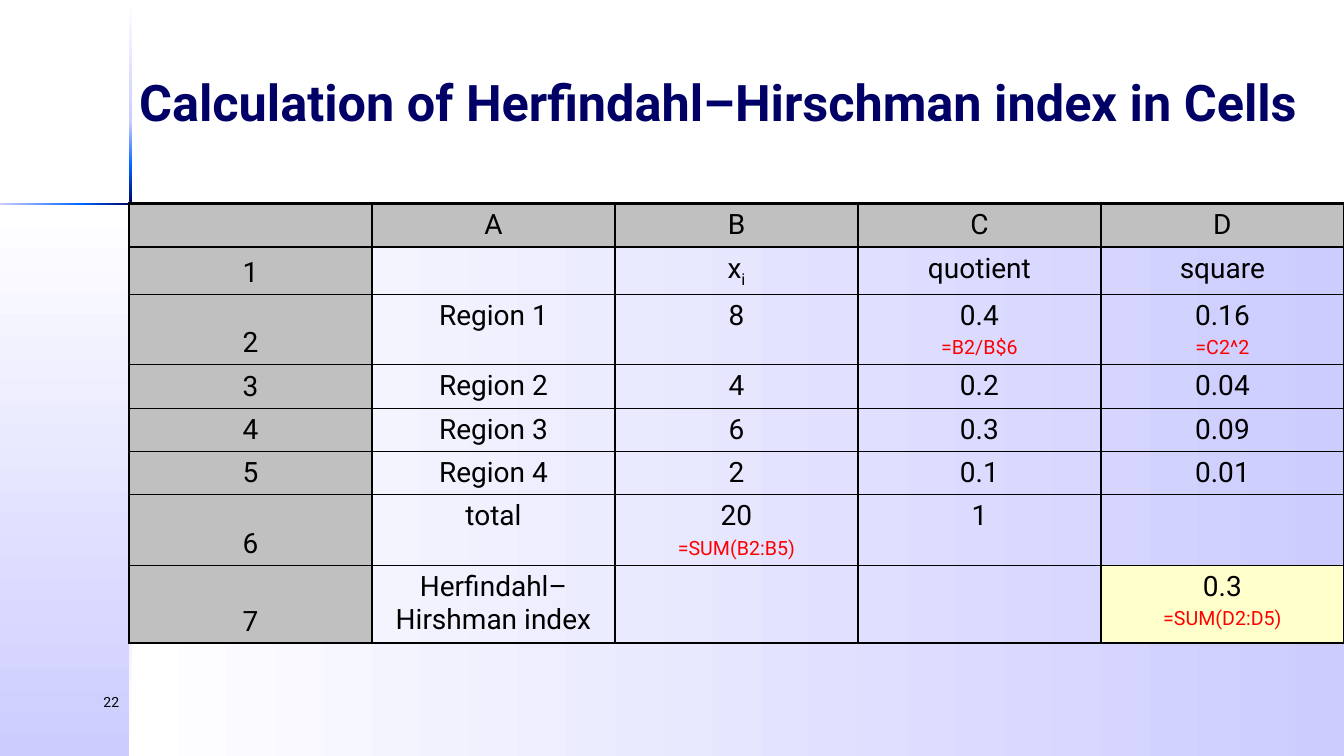
from itertools import pairwise

from pptx import Presentation
from pptx.dml.color import RGBColor
from pptx.enum.shapes import MSO_SHAPE as SHAPE
from pptx.enum.text import MSO_ANCHOR as ANCHOR, MSO_AUTO_SIZE as AUTO, PP_ALIGN as ALIGN
from pptx.oxml import parse_xml
from pptx.oxml.ns import nsdecls
from pptx.util import Inches, Pt

FONT = "Roboto"
WHITE = RGBColor(0xFF, 0xFF, 0xFF)
PALE = RGBColor(0xCC, 0xCC, 0xFF)
BLUE = RGBColor(0x00, 0x66, 0xFF)
NAVY = RGBColor(0x00, 0x00, 0x66)
BLACK = RGBColor(0x00, 0x00, 0x00)
GREY = RGBColor(0xC0, 0xC0, 0xC0)
RED = RGBColor(0xFF, 0x00, 0x00)
YELLOW = RGBColor(0xFF, 0xFF, 0xCC)

WIDTH, HEIGHT = 13.33, 7.5
LEFT, TOP = 1.28, 2.02
BAR = 0.03

TITLE = {"size": Pt(36), "bold": True, "name": FONT, "color": NAVY}
NUMBER = {"size": Pt(10), "name": FONT, "color": BLACK}
VALUE = {"size": Pt(20), "name": FONT, "color": BLACK}
FORMULA = {"size": Pt(14), "name": FONT, "color": RED}

ROW_HEIGHTS = [0.43, 0.47, 0.7, 0.43, 0.43, 0.43, 0.7, 0.77]
ROWS = [
    ["", "A", "B", "C", "D"],
    ["1", "", "x_i", "quotient", "square"],
    ["2", "Region 1", "8", "0.4\n=B2/B$6", "0.16\n=C2^2"],
    ["3", "Region 2", "4", "0.2", "0.04"],
    ["4", "Region 3", "6", "0.3", "0.09"],
    ["5", "Region 4", "2", "0.1", "0.01"],
    ["6", "total", "20\n=SUM(B2:B5)", "1", ""],
    ["7", "Herfindahl–Hirshman index", "", "", "0.3\n=SUM(D2:D5)"],
]


def add_run(p, text, style):
    """Append a run formatted from a dict of font values."""
    r = p.add_run()
    r.text = text
    for key, value in style.items():
        if key == "color":
            r.font.color.rgb = value
        else:
            setattr(r.font, key, value)
    return r


def add_band(s, box, colors, down):
    """Draw a borderless rectangle with evenly spaced gradient colours."""
    sp = s.shapes.add_shape(SHAPE.RECTANGLE, *map(Inches, box))
    sp.shadow.inherit = False
    sp.line.fill.background()
    step = 100000 // (len(colors) - 1)
    stops = "".join(
        f'<a:gs pos="{i * step}"><a:srgbClr val="{c}"/></a:gs>'
        for i, c in enumerate(colors))
    angle = 5400000 if down else 0
    sp.fill.background()
    old = sp.element.spPr.find("{*}noFill")
    old.getparent().replace(old, parse_xml(
        f'<a:gradFill {nsdecls("a")} rotWithShape="1"><a:gsLst>{stops}</a:gsLst>'
        f'<a:lin ang="{angle}" scaled="0"/></a:gradFill>'))


def add_backdrop(s, x, y, width, height):
    """Shade the two lower panels and draw the crossing bars at x, y."""
    add_band(s, (x, y, width - x, height - y), [WHITE, PALE], False)
    add_band(s, (0, y, x, height - y), [WHITE, PALE], True)
    glow = [[PALE, BLUE], [BLUE, NAVY, BLUE], [BLUE, PALE], [PALE, WHITE]]
    across = [0, 0.81, 1.78, 2.36, width]
    down = [0.01, 1.21, 1.65, 2.38, 2.82, height]
    for (a, b), colors in zip(pairwise(across), glow):
        add_band(s, (a, y - 0.01, b - a, 0.02), colors, False)
    for (a, b), colors in zip(pairwise(down), [[WHITE, PALE]] + glow):
        add_band(s, (x, a, BAR, b - a), colors, True)


def add_title(s, x, y, width, height):
    """Fill the title placeholder and bring it above the backdrop."""
    sp = s.shapes.title
    sp.left, sp.top, sp.width, sp.height = map(Inches, (x, y, width, height))
    tf = sp.text_frame
    for key, value in {"word_wrap": True, "auto_size": AUTO.NONE,
                       "vertical_anchor": ANCHOR.MIDDLE}.items():
        setattr(tf, key, value)
    p = tf.paragraphs[0]
    p.alignment = ALIGN.LEFT
    add_run(p, "Calculation of Herfindahl–Hirschman index in Cells", TITLE)
    sp.element.getparent().append(sp.element)


def add_number(s, x, y, width, height):
    """Write the slide number against the right of its box."""
    tf = s.shapes.add_textbox(*map(Inches, (x, y, width, height))).text_frame
    tf.word_wrap = True
    p = tf.paragraphs[0]
    p.alignment = ALIGN.RIGHT
    add_run(p, "22", NUMBER)


def set_borders(cell, widths):
    """Set the left, right, top and bottom border widths in points."""
    pr = cell._tc.get_or_add_tcPr()
    for i, (side, width) in enumerate(zip("LRTB", widths)):
        pr.insert(i, parse_xml(
            f'<a:ln{side} {nsdecls("a")} w="{Pt(width)}"><a:solidFill>'
            f'<a:srgbClr val="{BLACK}"/></a:solidFill></a:ln{side}>'))


def fill_cell(cell, text):
    """Write a centred value, with any formula in red beneath it."""
    tf = cell.text_frame
    for i, line in enumerate(text.split("\n")):
        p = tf.add_paragraph() if i else tf.paragraphs[0]
        p.alignment = ALIGN.CENTER
        if i:
            p.space_before = Pt(2.8)
        base, _, sub = line.partition("_")
        if base:
            add_run(p, base, FORMULA if i else VALUE)
        if sub:
            r = add_run(p, sub, VALUE)
            r.font._element.set("baseline", "-25000")


def add_sheet(s, x, y, width):
    """Build the spreadsheet table with grey headings and a thick frame."""
    n_rows, n_cols = len(ROWS), len(ROWS[0])
    frame = s.shapes.add_table(n_rows, n_cols, *map(
        Inches, (x, y, width, sum(ROW_HEIGHTS))))
    table = frame.table
    table.first_row = table.horz_banding = False
    for col in table.columns:
        col.width = Inches(width / n_cols)
    for i, (height, texts) in enumerate(zip(ROW_HEIGHTS, ROWS)):
        table.rows[i].height = Inches(height)
        for j, text in enumerate(texts):
            cell = table.cell(i, j)
            fill_cell(cell, text)
            last = i == n_rows - 1, j == n_cols - 1
            color = GREY if 0 in (i, j) else YELLOW if all(last) else None
            if color is None:
                cell.fill.background()
            else:
                cell.fill.solid()
                cell.fill.fore_color.rgb = color
            cell.vertical_anchor = ANCHOR.BOTTOM if i and not j else ANCHOR.TOP
            edges = j == 0, last[1], i == 0, last[0]
            set_borders(cell, [2.25 if edge else 1 for edge in edges])


def main():
    """Assemble and save the slide."""
    prs = Presentation()
    prs.slide_width, prs.slide_height = Inches(WIDTH), Inches(HEIGHT)
    s = prs.slides.add_slide(prs.slide_layouts[5])
    add_backdrop(s, LEFT, TOP, WIDTH, HEIGHT)
    add_number(s, 0, 6.83, LEFT, 0.5)
    add_title(s, LEFT, 0, WIDTH - LEFT, TOP)
    add_sheet(s, LEFT, TOP, WIDTH - LEFT)
    prs.save("out.pptx")


if __name__ == "__main__":
    main()
